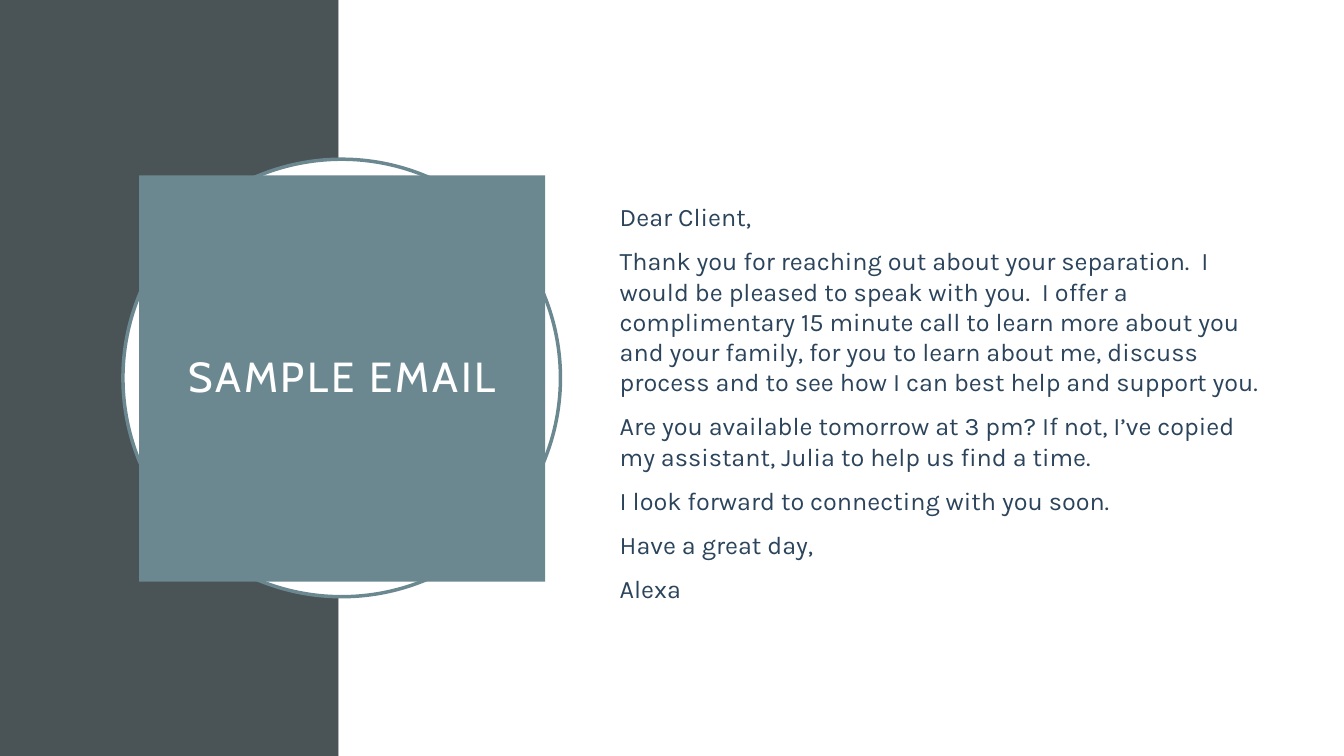
"""Build the sample email slide."""
from dataclasses import dataclass
from typing import Optional

from pptx import Presentation as new_presentation
from pptx.dml.color import RGBColor
from pptx.enum.shapes import MSO_SHAPE as ShapeKind
from pptx.enum.text import MSO_ANCHOR as Anchor, PP_ALIGN as Align
from pptx.shapes.autoshape import Shape
from pptx.slide import Slide
from pptx.text.text import TextFrame
from pptx.util import Inches, Length, Pt

CELL = 0.1
COLUMNS, ROWS = 133.33, 75
BAND_COLUMNS = 33.6

CHARCOAL = RGBColor(0x4A, 0x53, 0x56)
TEAL = RGBColor(0x6B, 0x88, 0x91)
NAVY = RGBColor(0x2B, 0x44, 0x5C)
WHITE = RGBColor(0xFF, 0xFF, 0xFF)

TITLE = "SAMPLE EMAIL"
EMAIL = (
    "Dear Client,",
    "Thank you for reaching out about your separation.  I would be pleased to "
    "speak with you.\u00a0 I offer a complimentary 15 minute call to learn more "
    "about you and your family, for you to learn about me, discuss process and "
    "to see how I can best help and support you.",
    "Are you available tomorrow at 3 pm? If not, I’ve copied my assistant, "
    "Julia to help us find a time.",
    "I look forward to connecting with you soon.",
    "Have a great day,",
    "Alexa",
)


@dataclass(frozen=True)
class Box:
    column: float
    row: float
    columns: float
    rows: float

    def lengths(self) -> tuple[Length, ...]:
        cells = (self.column, self.row, self.columns, self.rows)
        return tuple(Inches(count * CELL) for count in cells)


@dataclass(frozen=True)
class Panel:
    box: Box
    fill: RGBColor
    kind: ShapeKind = ShapeKind.RECTANGLE
    outline: Optional[RGBColor] = None


BAND = Panel(Box(0, 0, BAND_COLUMNS, ROWS), CHARCOAL)
PAGE = Panel(Box(BAND_COLUMNS, 0, COLUMNS - BAND_COLUMNS, ROWS), WHITE)
RING = Panel(Box(12.2, 15.8, 43.4, 43.4), WHITE, ShapeKind.OVAL, TEAL)
TITLE_TILE = Panel(Box(13.8, 17.4, 40.3, 40.3), TEAL)
EMAIL_BOX = Box(60.5, 9.1, 66.3, 61.7)


def draw_panel(slide: Slide, panel: Panel) -> Shape:
    shape = slide.shapes.add_shape(panel.kind, *panel.box.lengths())
    shape.shadow.inherit = False
    shape.fill.solid()
    shape.fill.fore_color.rgb = panel.fill
    if panel.outline is None:
        shape.line.fill.background()
    else:
        shape.line.color.rgb = panel.outline
        shape.line.width = Pt(2.5)
    return shape


def format_runs(frame: TextFrame, font: str, size: float, color: RGBColor) -> None:
    frame.word_wrap = True
    frame.vertical_anchor = Anchor.MIDDLE
    for paragraph in frame.paragraphs:
        for run in paragraph.runs:
            run.font.name = font
            run.font.size = Pt(size)
            run.font.color.rgb = color


def write_title(shape: Shape) -> None:
    frame = shape.text_frame
    frame.text = TITLE
    frame.margin_left = frame.margin_right = Inches(0.2)
    frame.margin_top = frame.margin_bottom = Inches(0.2)
    format_runs(frame, "Cabin", 30, WHITE)
    paragraph = frame.paragraphs[0]
    paragraph.alignment = Align.CENTER
    paragraph.line_spacing = 0.9
    paragraph.runs[0]._r.get_or_add_rPr().set("spc", "200")


def write_email(slide: Slide) -> None:
    frame = slide.shapes.add_textbox(*EMAIL_BOX.lengths()).text_frame
    frame.text = "\n".join(EMAIL)
    format_runs(frame, "Karla", 18, NAVY)
    for paragraph in frame.paragraphs:
        paragraph.space_before = Pt(10)


def main() -> None:
    presentation = new_presentation()
    presentation.slide_width = Inches(COLUMNS * CELL)
    presentation.slide_height = Inches(ROWS * CELL)
    slide = presentation.slides.add_slide(presentation.slide_layouts[6])
    for panel in (BAND, PAGE, RING):
        draw_panel(slide, panel)
    write_title(draw_panel(slide, TITLE_TILE))
    write_email(slide)
    presentation.save("out.pptx")


if __name__ == "__main__":
    main()
